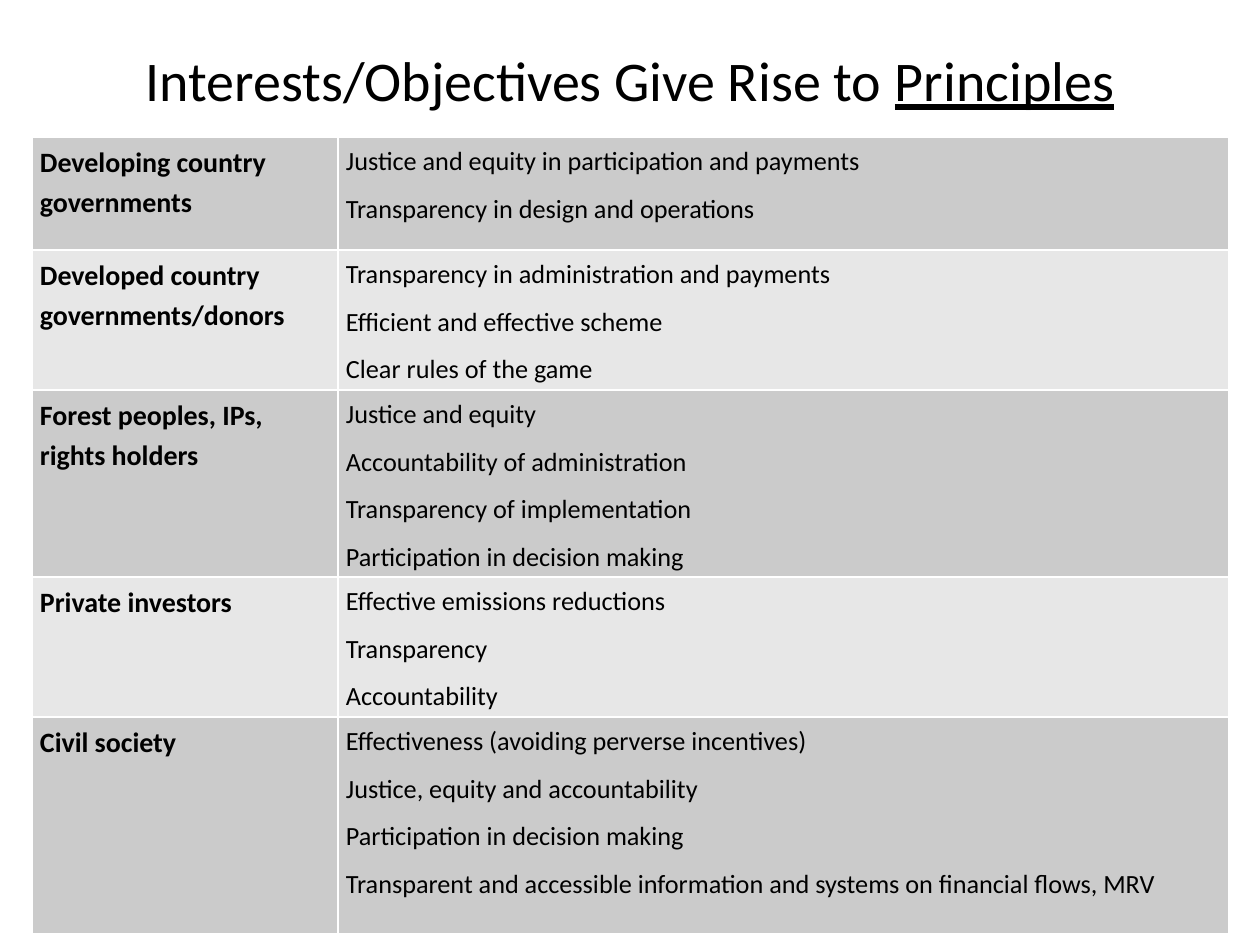
"""Build a slide with a table of stakeholder groups and their principles."""
from lxml import etree
from pptx import Presentation
from pptx.dml.color import RGBColor
from pptx.enum import text
from pptx.oxml.ns import qn
from pptx.util import Pt

PX = 914400 / 126
COLOURS = {"text": "000000", "border": "FFFFFF", "dark": "CBCBCB", "light": "E7E7E7"}
COLUMN_WIDTHS = [306, 891]
ROW_HEIGHTS = [113, 140, 187, 140, 217]
STAKEHOLDERS = [
    ("Developing country governments", [
        "Justice and equity in participation and payments",
        "Transparency in design and operations"]),
    ("Developed country governments/donors", [
        "Transparency in administration and payments",
        "Efficient and effective scheme",
        "Clear rules of the game"]),
    ("Forest peoples, IPs, rights holders", [
        "Justice and equity",
        "Accountability of administration",
        "Transparency of implementation",
        "Participation in decision making"]),
    ("Private investors", [
        "Effective emissions reductions",
        "Transparency",
        "Accountability"]),
    ("Civil society", [
        "Effectiveness (avoiding perverse incentives)",
        "Justice, equity and accountability",
        "Participation in decision making",
        "Transparent and accessible information and systems on financial flows, MRV"]),
]


def add_run(paragraph, words, size, bold=False, underline=False):
    run = paragraph.add_run()
    run.text = words
    run.font.name = "Calibri"
    run.font.size = Pt(size)
    run.font.bold = bold
    run.font.underline = underline
    run.font.color.rgb = RGBColor.from_string(COLOURS["text"])


def fill_cell(cell, lines, size, space_after, bold, colour):
    cell.margin_left = cell.margin_right = int(8 * PX)
    cell.margin_top = cell.margin_bottom = int(4 * PX)
    for index, line in enumerate(lines):
        frame = cell.text_frame
        paragraph = frame.add_paragraph() if index else frame.paragraphs[0]
        paragraph.line_spacing = 1.15
        paragraph.space_after = Pt(space_after)
        add_run(paragraph, line, size, bold)
    properties = cell._tc.get_or_add_tcPr()
    for side in ("a:lnL", "a:lnR", "a:lnT", "a:lnB"):
        border = etree.SubElement(properties, qn(side), w=str(Pt(1)))
        solid = etree.SubElement(border, qn("a:solidFill"))
        etree.SubElement(solid, qn("a:srgbClr"), val=COLOURS["border"])
    cell.fill.solid()
    cell.fill.fore_color.rgb = RGBColor.from_string(colour)


presentation = Presentation()
presentation.slide_width = int(1260 * PX)
presentation.slide_height = int(945 * PX)
slide = presentation.slides.add_slide(presentation.slide_layouts[6])

title = slide.shapes.add_textbox(int(63 * PX), 0, int(1134 * PX), int(158 * PX))
title.text_frame.word_wrap = True
title.text_frame.vertical_anchor = text.MSO_ANCHOR.MIDDLE
heading = title.text_frame.paragraphs[0]
heading.alignment = text.PP_ALIGN.CENTER
add_run(heading, "Interests/Objectives Give Rise to ", 32)
add_run(heading, "Principles", 32, underline=True)

table = slide.shapes.add_table(
    len(STAKEHOLDERS), len(COLUMN_WIDTHS), int(32 * PX), int(137 * PX),
    int(sum(COLUMN_WIDTHS) * PX), int(sum(ROW_HEIGHTS) * PX)).table
table.first_row = False
table.horz_banding = False
for column, width in zip(table.columns, COLUMN_WIDTHS):
    column.width = int(width * PX)

for index, (group, principles) in enumerate(STAKEHOLDERS):
    table.rows[index].height = int(ROW_HEIGHTS[index] * PX)
    colour = COLOURS["light" if index % 2 else "dark"]
    fill_cell(table.cell(index, 0), [group], 16, 10, True, colour)
    fill_cell(table.cell(index, 1), principles, 15, 6, False, colour)

presentation.save("out.pptx")
